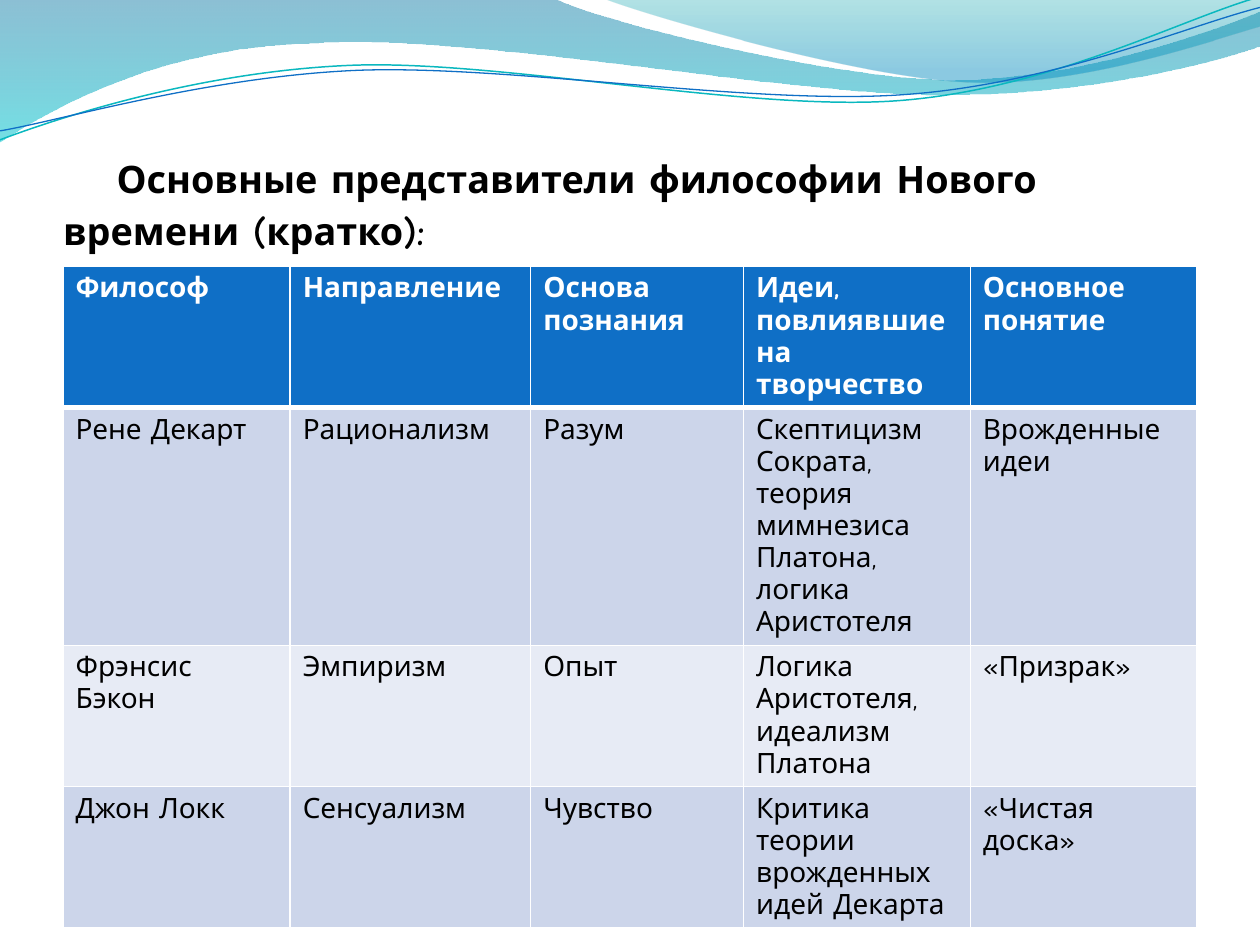
from math import cos, radians, sin

from lxml import etree
from pptx import Presentation
from pptx.dml.color import RGBColor
from pptx.enum.text import MSO_ANCHOR, MSO_AUTO_SIZE, PP_ALIGN
from pptx.oxml.ns import qn
from pptx.util import Cm, Pt

BOTTOM = MSO_ANCHOR.BOTTOM
NO_AUTOFIT = MSO_AUTO_SIZE.NONE
LEFT = PP_ALIGN.LEFT
TITLE_ONLY = 5
FONT = "Comic Neue"
LINE_TILT = -2.7

COLORS = {
    "white": "FFFFFF", "black": "000000", "blue": "0F6FC6", "turquoise": "0AB8BF",
    "row_dark": "CCD5EA", "row_light": "E7EBF5",
    "sea": "0074A1", "aqua": "00C6CF", "teal": "00A1A9", "sky": "008BBF",
}

# Boxes are left, top, width, height in cm. Outlines are in cm on the slide:
# a pair is a straight step, six numbers are a Bezier step.
WIDE_WAVE_BOX = (-0.03, -0.03, 25.46, 2.9)
WIDE_WAVE = [
    (0, 0), (11.18, -0.03),
    (12.09, 0.43, 16.87, 1.6, 19.25, 1.6), (21.67, 1.6, 24.33, 0.66, 25.4, 0.23),
    (25.43, 0.91),
    (24.97, 1.12, 22.1, 1.93, 18.95, 1.91), (15.8, 1.91, 9.7, 0.71, 6.53, 0.86),
    (3.28, 0.91, 1.17, 2.11, -0.03, 2.87), (0, 0),
]
RIGHT_WAVE_BOX = (12.17, -0.03, 13.23, 1.78)
RIGHT_WAVE = [
    (12.17, -0.03),
    (12.93, 0.28, 17.32, 1.57, 19.53, 1.65), (21.74, 1.75, 24.41, 0.81, 25.4, 0.53),
    (25.4, 0), (12.17, -0.03),
]
TURQUOISE_BOX = (-0.05, 0.56, 25.45, 1.8)
TURQUOISE_LINE = [
    (0, 2.82),
    (1.22, 2.36, 4.01, 1.45, 7.04, 1.32), (10.03, 1.19, 15.06, 2.26, 18.11, 2.03),
    (21.16, 1.8, 23.83, 0.38, 25.35, -0.05),
]
BLUE_BOX = (-0.05, 0.76, 25.48, 1.47)
BLUE_LINE = [
    (0, 2.64),
    (1.19, 2.44, 4.17, 1.55, 7.19, 1.42), (10.24, 1.3, 15.16, 2.13, 18.21, 1.91),
    (21.23, 1.7, 23.9, 0.53, 25.4, 0.15),
]

TITLE = "Основные представители философии Нового времени (кратко):"
COLUMN_WIDTHS = [4.58, 4.85, 4.29, 4.57, 4.57]
ROW_HEIGHTS = [1.04, 3.86, 1.04, 1.04]  # minimums; the rows grow with their text
TABLE_HEIGHT = 13.21
PHILOSOPHERS = [
    ["Философ", "Направление", "Основа познания",
     "Идеи, повлиявшие на творчество", "Основное понятие"],
    ["Рене Декарт", "Рационализм", "Разум",
     "Скептицизм Сократа, теория мимнезиса Платона, логика Аристотеля",
     "Врожденные идеи"],
    ["Фрэнсис Бэкон", "Эмпиризм", "Опыт",
     "Логика Аристотеля, идеализм Платона", "«Призрак»"],
    ["Джон Локк", "Сенсуализм", "Чувство",
     "Критика теории врожденных идей Декарта", "«Чистая доска»"],
]


def rgb(name):
    return RGBColor.from_string(COLORS[name])


def write(frame, text, size=16, color="black", bold=False, spacing=None, indent=None):
    paragraph = frame.paragraphs[0]
    paragraph.alignment = LEFT
    if spacing:
        paragraph.line_spacing = Pt(spacing)
    if indent:
        paragraph._p.get_or_add_pPr().set("indent", str(Cm(indent)))
    run = paragraph.add_run()
    run.text = text
    run.font.name = FONT
    run.font.size = Pt(size)
    run.font.bold = bold
    run.font.color.rgb = rgb(color)


def local_point(x, y, box, tilt):
    """Move a slide point into the box as it lies before it is tilted."""
    left, top, width, height = box
    dx, dy = x - left - width / 2, y - top - height / 2
    angle = radians(-tilt)
    return (Cm(dx * cos(angle) - dy * sin(angle) + width / 2),
            Cm(dx * sin(angle) + dy * cos(angle) + height / 2))


def add_outline(slide, outline, box, tilt=0, close=False):
    builder = slide.shapes.build_freeform(0, 0)
    builder.add_line_segments([(Cm(box[2]), Cm(box[3]))], close=close)
    shape = builder.convert_to_shape()
    shape.left, shape.top, shape.width, shape.height = map(Cm, box)
    shape.rotation = tilt % 360
    shape.shadow.inherit = False
    track = next(shape._element.spPr.iter(qn("a:path")))
    for straight_step in list(track):
        track.remove(straight_step)
    for number, step in enumerate(outline):
        kind = "moveTo" if number == 0 else "lnTo" if len(step) == 2 else "cubicBezTo"
        command = etree.SubElement(track, qn(f"a:{kind}"))
        for x, y in zip(step[::2], step[1::2]):
            local_x, local_y = local_point(x, y, box, tilt)
            etree.SubElement(command, qn("a:pt"), x=str(local_x), y=str(local_y))
    if close:
        etree.SubElement(track, qn("a:close"))
    return shape


def add_wave(slide, outline, box, stops):
    """Draw a closed wave; each stop is (position, colour, opacity in percent)."""
    wave = add_outline(slide, outline, box, close=True)
    wave.line.fill.background()
    wave.fill.gradient()
    wave.fill.gradient_angle = 270
    for stop, (position, color, _) in zip(wave.fill.gradient_stops, stops):
        stop.position = position
        stop.color.rgb = rgb(color)
    solid_colors = wave._element.spPr.iter(qn("a:srgbClr"))
    for solid, (_, _, opacity) in zip(solid_colors, stops):
        etree.SubElement(solid, qn("a:alpha")).set("val", str(opacity * 1000))


def add_wave_line(slide, outline, box, color, width):
    line = add_outline(slide, outline, box, tilt=LINE_TILT)
    line.fill.background()
    line.line.color.rgb = rgb(color)
    line.line.width = Pt(width)


def place_title(slide):
    title = slide.shapes.title
    slide.shapes._spTree.append(title._element)  # in front of the waves
    title.left, title.top, title.width, title.height = Cm(1.27), Cm(1.95), Cm(22.86), Cm(3.16)
    frame = title.text_frame
    frame.word_wrap = True
    frame.auto_size = NO_AUTOFIT
    frame.vertical_anchor = BOTTOM
    frame.margin_left = frame.margin_right = frame.margin_bottom = 0
    write(frame, TITLE, size=21.6, bold=True, spacing=30, indent=1.08)


def set_borders(cell, widths):
    properties = cell._tc.get_or_add_tcPr()
    for index, (side, width) in enumerate(widths.items()):
        border = etree.Element(qn(f"a:ln{side}"), w=str(Pt(width)))
        fill = etree.SubElement(border, qn("a:solidFill"))
        etree.SubElement(fill, qn("a:srgbClr")).set("val", COLORS["white"])
        properties.insert(index, border)


def add_philosopher_table(slide):
    frame = slide.shapes.add_table(
        len(ROW_HEIGHTS), len(COLUMN_WIDTHS), Cm(1.27), Cm(5.37),
        Cm(sum(COLUMN_WIDTHS)), Cm(TABLE_HEIGHT))
    table = frame.table
    for column, width in zip(table.columns, COLUMN_WIDTHS):
        column.width = Cm(width)
    for r, (height, entries) in enumerate(zip(ROW_HEIGHTS, PHILOSOPHERS)):
        table.rows[r].height = Cm(height)
        header = r == 0
        background = "blue" if header else ("row_light", "row_dark")[r % 2]
        borders = {"L": 1, "R": 1, "T": 3 if r == 1 else 1, "B": 3 if header else 1}
        for c, entry in enumerate(entries):
            cell = table.cell(r, c)
            cell.fill.solid()
            cell.fill.fore_color.rgb = rgb(background)
            set_borders(cell, borders)
            write(cell.text_frame, entry, color="white" if header else "black", bold=header)
    frame.height = Cm(TABLE_HEIGHT)


def main():
    presentation = Presentation()
    presentation.slide_width, presentation.slide_height = Cm(25.4), Cm(19.05)
    slide = presentation.slides.add_slide(presentation.slide_layouts[TITLE_ONLY])
    slide.background.fill.solid()
    slide.background.fill.fore_color.rgb = rgb("white")
    add_wave(slide, WIDE_WAVE, WIDE_WAVE_BOX, [(0, "sea", 45), (1, "aqua", 55)])
    add_wave(slide, RIGHT_WAVE, RIGHT_WAVE_BOX, [(0, "teal", 30), (0.8, "sky", 45)])
    add_wave_line(slide, TURQUOISE_LINE, TURQUOISE_BOX, "turquoise", 0.85)
    add_wave_line(slide, BLUE_LINE, BLUE_BOX, "blue", 0.75)
    place_title(slide)
    add_philosopher_table(slide)
    presentation.save("out.pptx")


if __name__ == "__main__":
    main()
